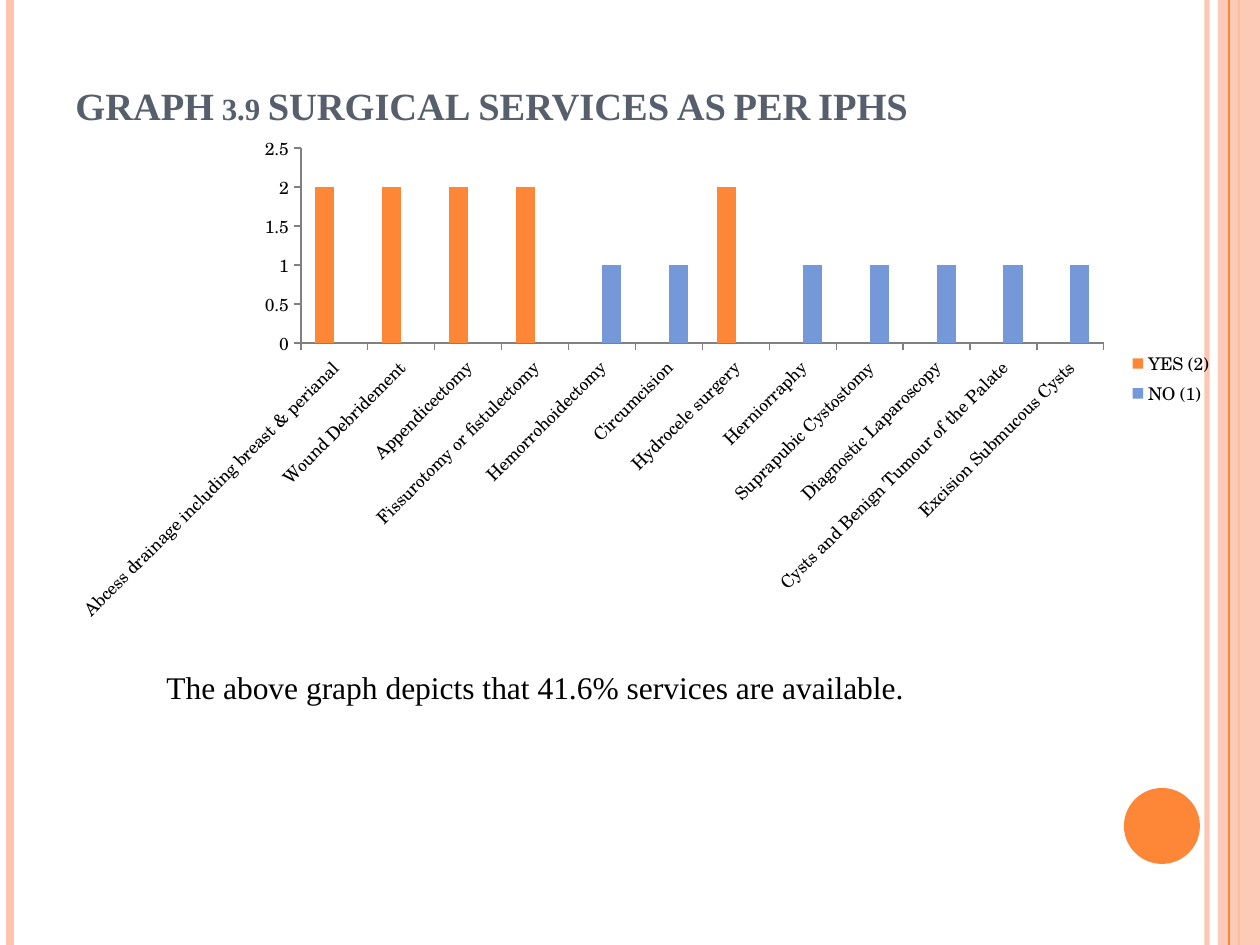
from lxml.etree import SubElement
from pptx import Presentation
from pptx.chart.data import CategoryChartData
from pptx.dml.color import RGBColor
from pptx.enum.chart import XL_CHART_TYPE as ChartType, XL_LEGEND_POSITION as LegendPos
from pptx.enum.chart import XL_TICK_MARK as TickMark
from pptx.enum.shapes import MSO_CONNECTOR as Connector, MSO_SHAPE as Preset
from pptx.enum.text import MSO_ANCHOR as Anchor
from pptx.oxml import parse_xml
from pptx.oxml.ns import nsdecls, qn
from pptx.util import Emu, Pt

PX = 914400 / 126
WIDTH, HEIGHT = 1260, 945
COLORS = {
    "orange": "FE8637",
    "peach": "FEC3AE",
    "blue": "7598D9",
    "slate": "575F6D",
    "axis": "808080",
    "black": "000000",
}
SERIF, CHART_FONT = "Times New Roman", "TeX Gyre Schola"

# service: whether it is available
SERVICES = {
    "Abcess drainage including breast & perianal": True,
    "Wound Debridement": True,
    "Appendicectomy": True,
    "Fissurotomy or fistulectomy": True,
    "Hemorrohoidectomy": False,
    "Circumcision": False,
    "Hydrocele surgery": True,
    "Herniorraphy": False,
    "Suprapubic Cystostomy": False,
    "Diagnostic Laparoscopy": False,
    "Cysts and Benign Tumour of the Palate": False,
    "Excision Submucous Cysts": False,
}


def px(*lengths):
    return [Emu(round(length * PX)) for length in lengths]


def rgb(name):
    return RGBColor.from_string(COLORS[name])


def set_opacity(element, percent):
    """Make the first solid colour inside the element partly transparent."""
    color = next(element.iter(qn("a:srgbClr")))
    SubElement(color, qn("a:alpha")).set("val", str(percent * 1000))


def write(frame, text, size, color="black", bold=False, small_caps=False):
    run = frame.paragraphs[0].add_run()
    run.text = text
    run.font.name, run.font.size, run.font.bold = SERIF, Pt(size), bold
    run.font.color.rgb = rgb(color)
    if small_caps:
        run.font._element.set("cap", "small")


class SlideBuilder:
    def __init__(self, slide):
        self.shapes = slide.shapes

    def stripe(self, x, color, width, opacity=100):
        """Draw a line down the whole height of the slide."""
        line = self.shapes.add_connector(Connector.STRAIGHT, *px(x, 0, x, HEIGHT))
        line.line.color.rgb = rgb(color)
        line.line.width = Pt(width)
        if opacity < 100:
            set_opacity(line._element.spPr, opacity)
        SubElement(line._element.spPr, qn("a:effectLst"))

    def shape(self, preset, box, color, opacity=100):
        shape = self.shapes.add_shape(preset, *px(*box))
        shape.shadow.inherit = False
        shape.fill.solid()
        shape.fill.fore_color.rgb = rgb(color)
        shape.line.fill.background()
        if opacity < 100:
            set_opacity(shape._element.spPr, opacity)

    def text(self, box, text, anchor=Anchor.TOP, bottom=6, **style):
        frame = self.shapes.add_textbox(*px(*box)).text_frame
        frame.word_wrap = True
        frame.vertical_anchor = anchor
        frame.margin_bottom = px(bottom)[0]
        write(frame, text, **style)

    def column_chart(self, box, plot_box, categories, series):
        """Series maps a name to its values and colour."""
        data = CategoryChartData()
        data.categories = categories
        for name, (values, _) in series.items():
            data.add_series(name, values)
        chart = self.shapes.add_chart(ChartType.COLUMN_CLUSTERED, *px(*box), data).chart
        chart.has_title = False
        chart.font.name, chart.font.size = CHART_FONT, Pt(10)
        chart.font.color.rgb = rgb("black")
        chart.has_legend = True
        chart.legend.position = LegendPos.RIGHT
        chart.legend.include_in_layout = False

        plot = chart.plots[0]
        plot.gap_width, plot.overlap, plot.vary_by_categories = 150, 0, False
        for bars, (_, color) in zip(plot.series, series.values()):
            bars.format.fill.solid()
            bars.format.fill.fore_color.rgb = rgb(color)
            bars.invert_if_negative = False

        for axis in (chart.category_axis, chart.value_axis):
            axis.has_major_gridlines = False
            axis.major_tick_mark = TickMark.OUTSIDE
            axis.minor_tick_mark = TickMark.NONE
            axis.format.line.color.rgb = rgb("axis")
            axis.format.line.width = Pt(0.75)
            axis.tick_labels.font.size = Pt(10)
        chart.value_axis.minimum_scale = 0
        chart.value_axis.maximum_scale = 2.5
        chart.value_axis.major_unit = 0.5
        slant = chart.category_axis._element.find(qn("c:txPr")).find(qn("a:bodyPr"))
        slant.set("rot", "-2700000")
        self.place_plot(chart, box, plot_box)

    def place_plot(self, chart, box, plot_box):
        """Fix the inner plot area, given in slide px, within the chart's box."""
        left, top, width, height = box
        x, y, w, h = plot_box
        shares = {"x": (x - left) / width, "y": (y - top) / height,
                  "w": w / width, "h": h / height}
        modes = "".join(f'<c:{key}Mode val="edge"/>' for key in "xy")
        sizes = "".join(f'<c:{key} val="{share:.4f}"/>' for key, share in shares.items())
        layout = parse_xml(
            f'<c:layout {nsdecls("c")}><c:manualLayout><c:layoutTarget val="inner"/>'
            f"{modes}{sizes}</c:manualLayout></c:layout>")
        area = chart._chartSpace.chart.plotArea
        for automatic in area.findall(qn("c:layout")):
            area.remove(automatic)
        area.insert(0, layout)


def main():
    deck = Presentation()
    deck.slide_width, deck.slide_height = px(WIDTH, HEIGHT)
    page = SlideBuilder(deck.slides.add_slide(deck.slide_layouts[6]))

    page.stripe(1207, "peach", 3, opacity=93)
    page.stripe(10, "peach", 4.5)
    page.stripe(1239, "orange", 1.5)
    page.shape(Preset.RECTANGLE, (1218, 0, 42, HEIGHT), "peach", opacity=87)
    page.stripe(1229, "orange", 0.75)
    page.shape(Preset.OVAL, (1124, 788, 76, 76), "orange")

    page.text((63, 38, 1029, 158), "GRAPH 3.9 SURGICAL SERVICES AS PER IPHS",
              anchor=Anchor.BOTTOM, bottom=68, size=22, color="slate",
              bold=True, small_caps=True)
    available = SERVICES.values()
    page.column_chart(
        (54, 125, 1171, 507), (301, 148, 803, 195), list(SERVICES),
        {"YES (2)": ([2 if yes else None for yes in available], "orange"),
         "NO (1)": ([None if yes else 1 for yes in available], "blue")})
    page.text((154, 662, 883, 50),
              "The above graph depicts that 41.6% services are available.", size=18)

    deck.save("out.pptx")


if __name__ == "__main__":
    main()
